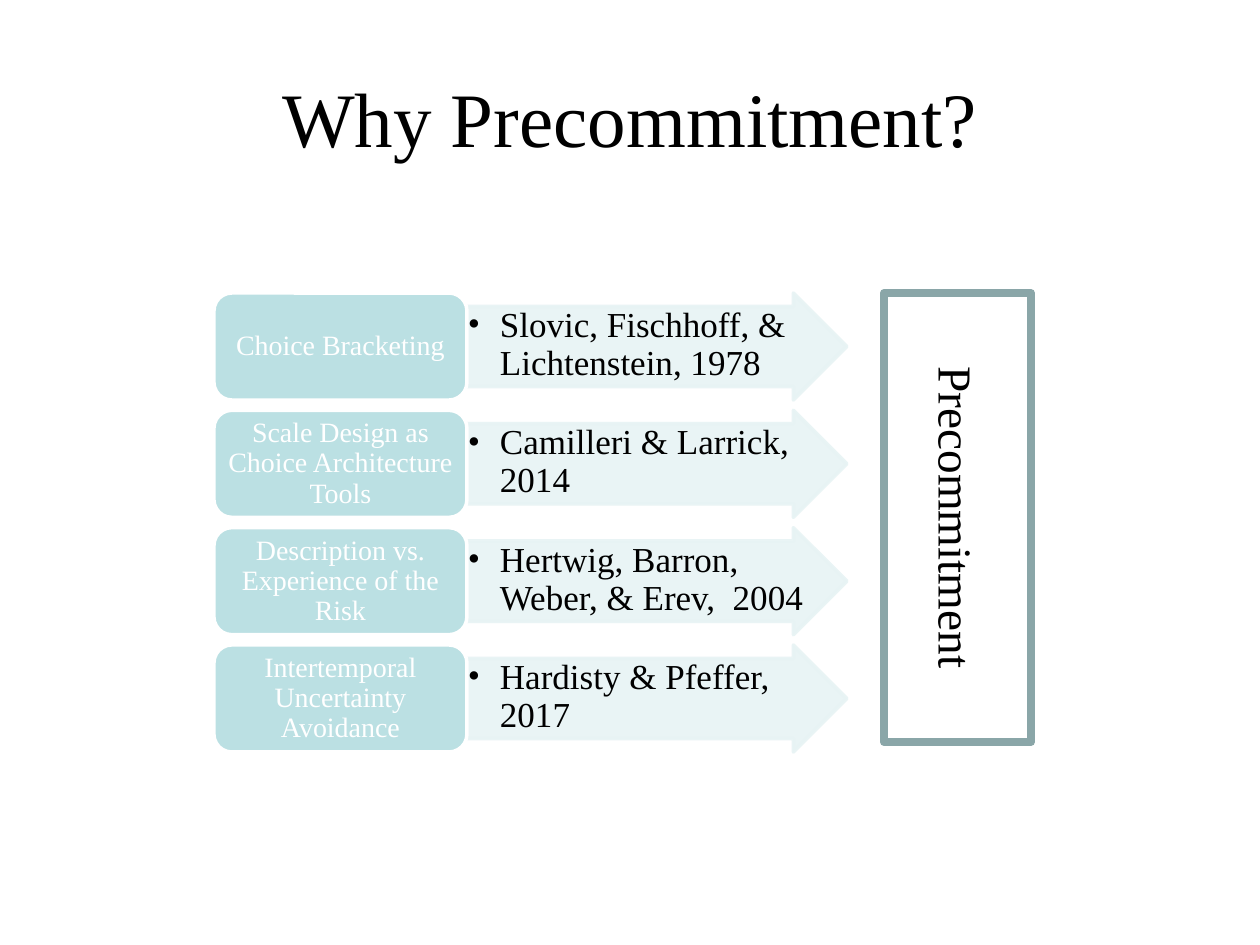
from dataclasses import dataclass

from lxml.etree import SubElement
from pptx import Presentation
from pptx.dml.color import RGBColor
from pptx.enum.shapes import MSO_SHAPE
from pptx.enum.text import MSO_ANCHOR, PP_ALIGN
from pptx.oxml.ns import qn
from pptx.util import Emu, Pt

# Content
TITLE = "Why Precommitment?"
REASONS = [
    ("Choice Bracketing", "Slovic, Fischhoff, & Lichtenstein, 1978"),
    ("Scale Design as Choice Architecture Tools", "Camilleri & Larrick, 2014"),
    ("Description vs. Experience of the Risk", "Hertwig, Barron, Weber, & Erev,  2004"),
    ("Intertemporal Uncertainty Avoidance", "Hardisty & Pfeffer, 2017"),
]
OUTCOME = "Precommitment"


@dataclass(frozen=True)
class Theme:
    font: str = "Times New Roman"
    ink: str = "000000"
    paper: str = "FFFFFF"
    label_fill: str = "BBE0E3"
    arrow_fill: str = "E7F3F4"
    frame: str = "8AA6A8"
    title_size: int = 44
    outcome_size: int = 27
    source_size: int = 20
    label_size: int = 16


THEME = Theme()

# Layout in px
PX_PER_INCH = 126
SLIDE_SIZE = (1260, 945)
TITLE_BOX = (63, 38, 1134, 157)
OUTCOME_BOX = (884, 293, 147, 449)
ROWS_TOP, ROWS_HEIGHT, ROW_HEIGHT = 293, 459, 107
LABEL_LEFT, LABEL_WIDTH = 214, 253
ARROW_WIDTH = 380
BULLET_INDENT = 32
ROW_PITCH = (ROWS_HEIGHT - ROW_HEIGHT) / (len(REASONS) - 1)


def px(length):
    return Emu(round(length * 914400 / PX_PER_INCH))


def write(shape, text, size, color, align=PP_ALIGN.CENTER,
          anchor=MSO_ANCHOR.MIDDLE, spacing=None, margins=None):
    frame = shape.text_frame
    frame.word_wrap = True
    frame.vertical_anchor = anchor
    for side, length in (margins or {}).items():
        setattr(frame, f"margin_{side}", px(length))
    paragraph = frame.paragraphs[0]
    paragraph.alignment = align
    if spacing:
        paragraph.line_spacing = spacing
    run = paragraph.add_run()
    run.text = text
    for name, value in {"name": THEME.font, "size": Pt(size)}.items():
        setattr(run.font, name, value)
    run.font.color.rgb = RGBColor.from_string(color)
    return paragraph


def add_box(slide, kind, box, fill, line, line_width):
    shape = slide.shapes.add_shape(kind, *map(px, box))
    shape.shadow.inherit = False
    if fill:
        shape.fill.solid()
        shape.fill.fore_color.rgb = RGBColor.from_string(fill)
    else:
        shape.fill.background()
    shape.line.color.rgb = RGBColor.from_string(line)
    shape.line.width = Pt(line_width)
    return shape


def set_opacity(shape, percent):
    for color in shape.element.spPr.iter(qn("a:srgbClr")):
        SubElement(color, qn("a:alpha"), val=str(percent * 1000))


def add_bullet(paragraph):
    paragraph.level = 1
    properties = paragraph._p.get_or_add_pPr()
    properties.set("marL", str(px(BULLET_INDENT)))
    properties.set("indent", str(px(-BULLET_INDENT)))
    SubElement(properties, qn("a:buFont"), typeface=THEME.font)
    SubElement(properties, qn("a:buChar"), char="•")


def add_reason(slide, top, label, source):
    # Source arrow: its text area already stops inside the arrowhead
    arrow_box = (LABEL_LEFT + LABEL_WIDTH, top, ARROW_WIDTH, ROW_HEIGHT)
    arrow = add_box(slide, MSO_SHAPE.RIGHT_ARROW, arrow_box,
                    THEME.arrow_fill, THEME.arrow_fill, 2)
    arrow.adjustments[0] = 0.75
    arrow.adjustments[1] = 0.5
    set_opacity(arrow, 90)
    add_bullet(write(arrow, source, THEME.source_size, THEME.ink,
                     PP_ALIGN.LEFT, MSO_ANCHOR.TOP, 0.9,
                     {"left": 1, "top": 1, "right": 0, "bottom": 1}))

    # Reason label
    label_box = (LABEL_LEFT, top, LABEL_WIDTH, ROW_HEIGHT)
    shape = add_box(slide, MSO_SHAPE.ROUNDED_RECTANGLE, label_box,
                    THEME.label_fill, THEME.paper, 2)
    write(shape, label, THEME.label_size, THEME.paper, spacing=0.9,
          margins={"left": 8, "top": 4, "right": 8, "bottom": 4})


def main():
    presentation = Presentation()
    presentation.slide_width, presentation.slide_height = map(px, SLIDE_SIZE)
    slide = presentation.slides.add_slide(presentation.slide_layouts[6])

    # Title
    title = slide.shapes.add_textbox(*map(px, TITLE_BOX))
    write(title, TITLE, THEME.title_size, THEME.ink)

    # Reasons and their sources
    for row, (label, source) in enumerate(REASONS):
        add_reason(slide, ROWS_TOP + row * ROW_PITCH, label, source)

    # Outcome, read downwards
    outcome = add_box(slide, MSO_SHAPE.RECTANGLE, OUTCOME_BOX,
                      None, THEME.frame, 4.5)
    write(outcome, OUTCOME, THEME.outcome_size, THEME.ink)
    outcome.text_frame._txBody.bodyPr.set("vert", "vert")

    presentation.save("out.pptx")


if __name__ == "__main__":
    main()
